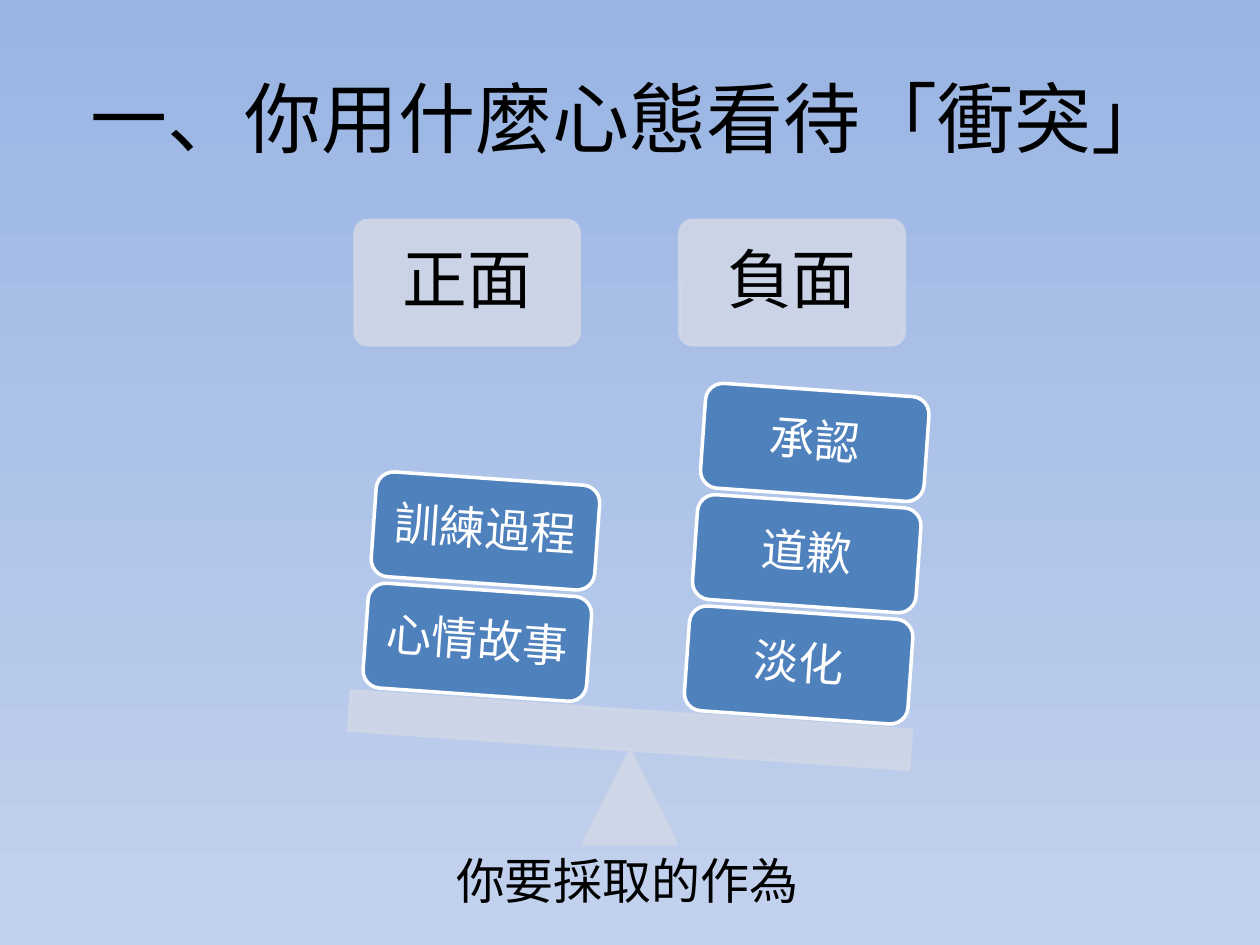
from dataclasses import dataclass

from pptx import Presentation
from pptx.dml.color import RGBColor
from pptx.enum.shapes import MSO_SHAPE
from pptx.enum.text import MSO_ANCHOR, PP_ALIGN
from pptx.oxml.ns import qn
from pptx.util import Pt
from lxml import etree

ROUNDED = MSO_SHAPE.ROUNDED_RECTANGLE
RECTANGLE = MSO_SHAPE.RECTANGLE
TRIANGLE = MSO_SHAPE.ISOSCELES_TRIANGLE
MIDDLE = MSO_ANCHOR.MIDDLE
CENTER, LEFT = PP_ALIGN.CENTER, PP_ALIGN.LEFT


@dataclass(frozen=True)
class Theme:
    sky_top: str = "9AB5E4"
    sky_bottom: str = "C2D1ED"
    pale: str = "CFD7E7"
    weight: str = "4F81BD"
    light: str = "FFFFFF"
    dark: str = "000000"
    title_font: str = "Arial"
    body_font: str = "Calibri"
    title_size: float = 44
    heading_size: float = 37
    weight_size: float = 26
    caption_size: float = 28
    outline: float = 2
    pale_opacity: int = 90


@dataclass(frozen=True)
class Box:
    left: float
    top: float
    width: float
    height: float

    def points(self) -> tuple:
        return Pt(self.left), Pt(self.top), Pt(self.width), Pt(self.height)


@dataclass(frozen=True)
class Side:
    heading: str
    heading_left: float
    weights: tuple  # from the beam upwards
    first_left: float
    first_top: float


THEME = Theme()
TILT = 4
HEADING_TOP, HEADING_WIDTH, HEADING_HEIGHT = 126, 128, 71
WEIGHT_WIDTH, WEIGHT_HEIGHT = 128, 60
STEP_RIGHT, STEP_UP = 4.6, 63.6
SIDES = (
    Side("正面", 203, ("心情故事", "訓練過程"), 208.8, 337),
    Side("負面", 388.6, ("淡化", "道歉", "承認"), 392.4, 350),
)
BEAM = Box(199.5, 406, 321, 22.5)
PIVOT = Box(333.4, 429, 53.2, 53.2)


def write(shape, text: str, size: float, color: str, font_name: str,
          align=CENTER, spacing: float = 0.9) -> None:
    paragraph = shape.text_frame.paragraphs[0]
    paragraph.alignment = align
    paragraph.line_spacing = spacing
    run = paragraph.add_run()
    run.text = text
    run.font.size = Pt(size)
    run.font.name = font_name
    run.font.color.rgb = RGBColor.from_string(color)


def set_frame(shape, horizontal: float, vertical: float, anchor=MIDDLE) -> None:
    frame = shape.text_frame
    frame.word_wrap = True
    frame.vertical_anchor = anchor
    frame.margin_left = frame.margin_right = Pt(horizontal)
    frame.margin_top = frame.margin_bottom = Pt(vertical)


def add_part(slide, kind, box: Box, fill: str, line: str, rotation: float = 0):
    shape = slide.shapes.add_shape(kind, *box.points())
    shape.shadow.inherit = False
    shape.rotation = rotation
    shape.fill.solid()
    shape.fill.fore_color.rgb = RGBColor.from_string(fill)
    shape.line.color.rgb = RGBColor.from_string(line)
    shape.line.width = Pt(THEME.outline)
    return shape


def add_pale_part(slide, kind, box: Box, rotation: float = 0):
    shape = add_part(slide, kind, box, THEME.pale, THEME.pale, rotation)
    # Fill and outline are slightly see-through
    for color in shape.element.spPr.iter(qn("a:srgbClr")):
        alpha = etree.SubElement(color, qn("a:alpha"))
        alpha.set("val", str(THEME.pale_opacity * 1000))
    return shape


def add_heading(slide, side: Side) -> None:
    box = Box(side.heading_left, HEADING_TOP, HEADING_WIDTH, HEADING_HEIGHT)
    shape = add_pale_part(slide, ROUNDED, box)
    shape.adjustments[0] = 0.1
    set_frame(shape, 10.8, 10.8)
    write(shape, side.heading, THEME.heading_size, THEME.dark, THEME.body_font)


def add_weights(slide, side: Side) -> None:
    for level, text in enumerate(side.weights):
        box = Box(side.first_left + level * STEP_RIGHT,
                  side.first_top - level * STEP_UP, WEIGHT_WIDTH, WEIGHT_HEIGHT)
        shape = add_part(slide, ROUNDED, box, THEME.weight, THEME.light, TILT)
        set_frame(shape, 7.9, 7.9)
        write(shape, text, THEME.weight_size, THEME.light, THEME.body_font)


def main() -> None:
    presentation = Presentation()
    presentation.slide_width, presentation.slide_height = Pt(720), Pt(540)
    slide = presentation.slides.add_slide(presentation.slide_layouts[5])

    # Background, top to bottom
    background = slide.background.fill
    background.gradient()
    background.gradient_angle = 270
    for stop, color in zip(background.gradient_stops, (THEME.sky_top, THEME.sky_bottom)):
        stop.color.rgb = RGBColor.from_string(color)

    # Title
    title = slide.shapes.title
    title.left, title.top, title.width, title.height = Box(36, 21.6, 648, 90).points()
    set_frame(title, 7.2, 3.6)
    write(title, "一、你用什麼心態看待「衝突」", THEME.title_size, THEME.dark,
          THEME.title_font, spacing=1)

    # Tilted scale with its headings and weights
    for side in SIDES:
        add_heading(slide, side)
    add_pale_part(slide, TRIANGLE, PIVOT)
    add_pale_part(slide, RECTANGLE, BEAM, TILT)
    for side in SIDES:
        add_weights(slide, side)

    # Caption below the pivot
    caption = slide.shapes.add_textbox(*Box(253.5, 482.4, 212.5, 41).points())
    set_frame(caption, 7.2, 3.6, MSO_ANCHOR.TOP)
    write(caption, "你要採取的作為", THEME.caption_size, THEME.dark,
          THEME.body_font, LEFT, 1)

    presentation.save("out.pptx")


if __name__ == "__main__":
    main()
